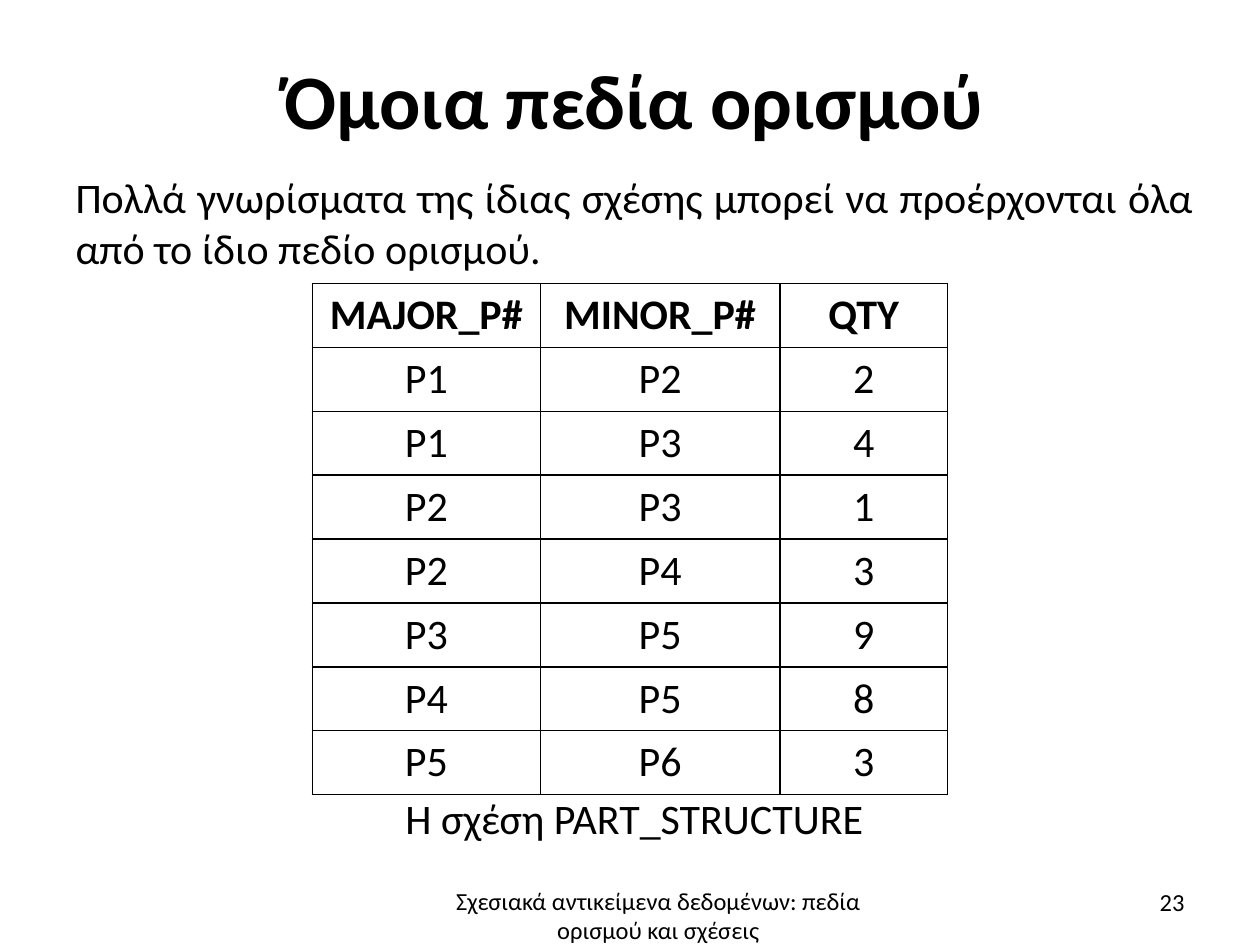
from lxml.etree import SubElement
from pptx import Presentation
from pptx.dml.color import RGBColor
from pptx.enum.text import MSO_ANCHOR as Anchor, MSO_AUTO_SIZE as AutoSize, PP_ALIGN as Align
from pptx.oxml import parse_xml
from pptx.oxml.ns import nsdecls, qn
from pptx.util import Pt

BLACK = RGBColor(0, 0, 0)
FONT = "Calibri"
HEADER = ("MAJOR_P#", "MINOR_P#", "QTY")
PARTS = (
    ("P1", "P2", "2"),
    ("P1", "P3", "4"),
    ("P2", "P3", "1"),
    ("P2", "P4", "3"),
    ("P3", "P5", "9"),
    ("P4", "P5", "8"),
    ("P5", "P6", "3"),
)


def style(p, size, align, bold=False):
    """Give a paragraph its alignment and its runs their font."""
    p.alignment = align
    for r in p.runs:
        r.font.name, r.font.size, r.font.bold = FONT, Pt(size), bold
        r.font.color.rgb = BLACK


def place(sp, box):
    """Move a shape to a box of left, top, width and height in points."""
    sp.left, sp.top, sp.width, sp.height = (Pt(v) for v in box)


def set_indent(p, margin, first):
    """Set the left margin and first-line indent of a paragraph."""
    pPr = p._p.get_or_add_pPr()
    pPr.set("marL", str(Pt(margin)))
    pPr.set("indent", str(Pt(first)))
    return pPr


def add_title(slide, box, text):
    """Fill the title placeholder."""
    sp = slide.shapes.title
    place(sp, box)
    tf = sp.text_frame
    tf.text = text
    tf.auto_size = AutoSize.NONE
    tf.vertical_anchor = Anchor.MIDDLE
    style(tf.paragraphs[0], 44, Align.CENTER, True)


def add_body(slide, box, intro, caption, gap):
    """Fill the body with an introduction and a caption a gap below it."""
    sp = slide.placeholders[1]
    place(sp, box)
    tf = sp.text_frame
    tf.text = f"{intro}\n{caption}"
    tf.auto_size = AutoSize.NONE
    rules = ((Align.JUSTIFY, 0), (Align.CENTER, gap))
    for p, (align, before) in zip(tf.paragraphs, rules):
        SubElement(set_indent(p, 0, 0), qn("a:buNone"))
        p.space_before = Pt(before)
        style(p, 24, align)


def add_borders(cell):
    """Draw a thin black line on each side of a cell."""
    tcPr = cell._tc.get_or_add_tcPr()
    for i, side in enumerate(("lnL", "lnR", "lnT", "lnB")):
        tcPr.insert(i, parse_xml(
            f'<a:{side} {nsdecls("a")} w="{Pt(1)}"><a:solidFill>'
            f'<a:srgbClr val="{BLACK}"/></a:solidFill></a:{side}>'))


def add_parts_table(slide, box, widths, rows):
    """Add the ruled table of parts, its first row in bold."""
    gf = slide.shapes.add_table(len(rows), len(widths), *(Pt(v) for v in box))
    table = gf.table
    for col, width in zip(table.columns, widths):
        col.width = Pt(width)
    for i, row in enumerate(rows):
        for j, text in enumerate(row):
            cell = table.cell(i, j)
            cell.text = text
            cell.fill.background()
            add_borders(cell)
            p = cell.text_frame.paragraphs[0]
            set_indent(p, 27, -27)
            style(p, 24, Align.CENTER, i == 0)


def add_note(slide, box, text, align, anchor):
    """Add a small line of text at the foot of the slide."""
    tf = slide.shapes.add_textbox(*(Pt(v) for v in box)).text_frame
    tf.word_wrap = True
    tf.vertical_anchor = anchor
    tf.text = text
    style(tf.paragraphs[0], 14, align)


def main():
    """Build and save the slide."""
    prs = Presentation()
    prs.slide_width, prs.slide_height = Pt(720), Pt(540)
    slide = prs.slides.add_slide(prs.slide_layouts[1])
    add_title(slide, (31, 6.5, 663, 99.5), "Όμοια πεδία ορισμού")
    add_body(slide, (36, 94.5, 653, 397),
             "Πολλά γνωρίσματα της ίδιας σχέσης μπορεί να προέρχονται όλα "
             "από το ίδιο πεδίο ορισμού.",
             "Η σχέση PART_STRUCTURE", 297)
    add_parts_table(slide, (178.5, 162, 363, 288), (130.3, 136.8, 95.9),
                    (HEADER, *PARTS))
    add_note(slide, (250.5, 502.5, 251.5, 39.5),
             "Σχεσιακά αντικείμενα δεδομένων: πεδία ορισμού και σχέσεις",
             Align.CENTER, Anchor.TOP)
    add_note(slide, (516, 500.5, 168, 29), "23", Align.RIGHT, Anchor.MIDDLE)
    prs.save("out.pptx")


if __name__ == "__main__":
    main()
